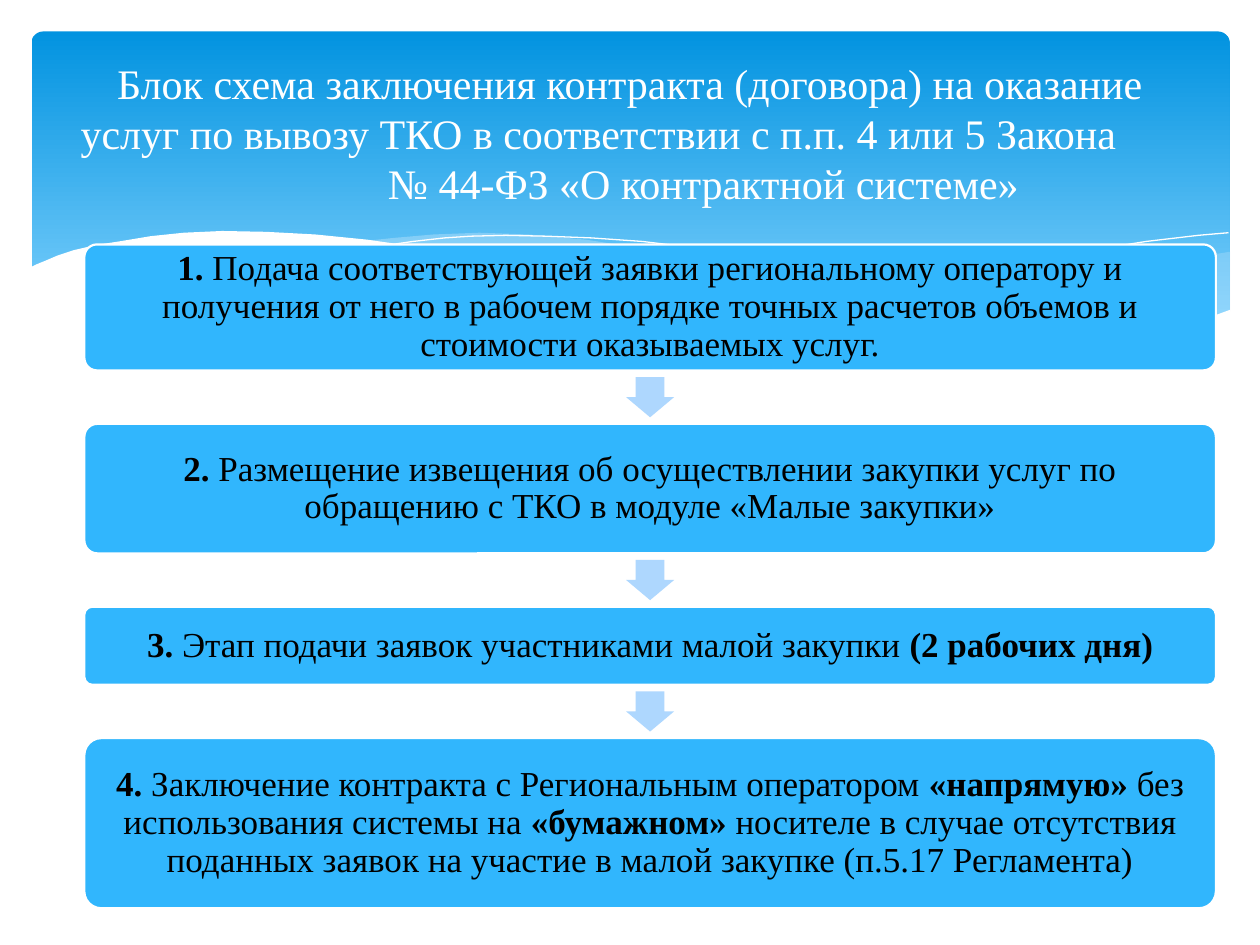
import pptx
import pptx.dml.color
import pptx.enum.shapes
import pptx.enum.text
import pptx.oxml
import pptx.oxml.ns
import pptx.util

Pt = pptx.util.Pt
SHAPE = pptx.enum.shapes.MSO_SHAPE

COLORS = {
    "sky_top": "0293E0",
    "sky_bottom": "83D3FE",
    "wave": "C6E7FC",
    "step": "31B6FD",
    "arrow": "AED7FE",
    "white": "FFFFFF",
    "black": "000000",
}

RIGHT_WAVE = [
    (702, 144), (672, 149), (642, 156), (620, 161), (580, 171), (542, 178),
    (508, 185), (476, 191), (508, 195), (536, 198), (562, 200), (586, 200),
    (608, 199), (628, 197), (646, 194), (663, 191), (678, 187), (693, 181),
    (703, 178), (703, 144),
]
MIDDLE_WAVE = [
    (643, 197), (603, 191), (558, 183), (508, 173), (453, 160), (420, 152),
    (390, 146), (361, 141), (335, 137), (302, 134), (274, 133), (248, 134),
    (225, 136), (206, 138), (233, 142), (261, 146), (291, 152), (323, 160),
    (354, 167), (382, 173), (408, 179), (433, 184), (456, 188), (479, 192),
    (500, 195), (520, 197), (539, 199), (556, 200), (603, 200), (624, 199),
]
LEFT_CREST = [
    (222, 140), (236, 138), (254, 136), (269, 135), (289, 134.5), (312, 135),
    (338, 136), (367, 138), (400, 142), (438, 147), (479, 154), (523, 163),
    (572, 174), (626, 188), (653, 196),
]
RIGHT_CREST = [
    (441, 185), (470, 177), (500, 169), (539, 161), (580, 151), (624, 143),
    (655, 138), (685, 134.5), (702, 133),
]
FRONT_WAVE = [
    (703, 177), (684, 184), (662, 191), (639, 195), (612, 198), (582, 199),
    (548, 198), (510, 195), (467, 189), (417, 180), (362, 168), (322, 158),
    (281, 149), (245, 142), (210, 137), (180, 134), (152, 132.5), (127, 132),
    (105, 133), (86, 135), (68, 138), (55, 140), (42, 143), (33, 146),
    (26, 149), (21, 151), (17, 153), (17, 237), (703, 237),
]

# Each title line: text, left margin, right margin
TITLE = [
    ("Блок схема заключения контракта (договора) на оказание", 0, 0),
    ("услуг по вывозу ТКО в соответствии с п.п. 4 или 5 Закона", 0, 36),
    ("№ 44-ФЗ «О контрактной системе»", 84, 0),
]

# Each step: height and runs, which alternate between bold and regular
STEPS = [
    (72, ["1.", " Подача соответствующей заявки региональному оператору и "
          "получения от него в рабочем порядке точных расчетов объемов и "
          "стоимости оказываемых услуг."]),
    (74, ["2.", " Размещение извещения об осуществлении закупки услуг по "
          "обращению с ТКО в модуле «Малые закупки»"]),
    (44.6, ["3. ", "Этап подачи заявок участниками малой закупки ",
            "(2 рабочих дня)"]),
    (97.2, ["4. ", "Заключение контракта с Региональным оператором ",
            "«напрямую» ", "без использования системы на ", "«бумажном» ",
            "носителе в случае отсутствия поданных заявок на участие в малой "
            "закупке (п.5.17 Регламента)"]),
]
STEP_LEFT, STEP_TOP, STEP_WIDTH, STEP_GAP = 48.2, 139.7, 646.6, 30.5
ARROW_WIDTH, ARROW_HEIGHT = 27.4, 23


def rgb(name):
    return pptx.dml.color.RGBColor.from_string(COLORS[name])


class SlideBuilder:
    """Holds the text style and the slide being drawn."""

    font_name = "Times New Roman"

    def __init__(self, slide):
        self.shapes = slide.shapes

    def finish(self, sp, fill=None, line=None, line_width=0):
        sp.shadow.inherit = False
        if fill:
            sp.fill.solid()
            sp.fill.fore_color.rgb = rgb(fill)
        else:
            sp.fill.background()
        if line:
            sp.line.color.rgb = rgb(line)
            sp.line.width = Pt(line_width)
        else:
            sp.line.fill.background()

    def preset(self, kind, left, top, width, height, adjustments, **style):
        sp = self.shapes.add_shape(kind, Pt(left), Pt(top), Pt(width), Pt(height))
        for i, value in enumerate(adjustments):
            sp.adjustments[i] = value
        self.finish(sp, **style)
        return sp

    def sky(self):
        sp = self.preset(SHAPE.ROUNDED_RECTANGLE, 18, 18, 684.7, 194.4, [0.034])
        sp.fill.gradient()
        sp.fill.gradient_angle = 270
        stops = zip(sp.fill.gradient_stops, ("sky_top", "sky_bottom"), (0, 0.9))
        for stop, color, position in stops:
            stop.color.rgb = rgb(color)
            stop.position = position

    def outline(self, points, close=True, alpha=None, **style):
        """Draw a freeform; alpha is its opacity in percent."""
        points = [(Pt(x), Pt(y)) for x, y in points]
        builder = self.shapes.build_freeform(*points[0])
        builder.add_line_segments(points[1:], close=close)
        sp = builder.convert_to_shape()
        self.finish(sp, **style)
        if alpha:
            color = sp._element.spPr.find(".//" + pptx.oxml.ns.qn("a:srgbClr"))
            color.append(pptx.oxml.parse_xml(
                f'<a:alpha {pptx.oxml.ns.nsdecls("a")} val="{alpha * 1000}"/>'))

    def set_font(self, p, size, color):
        p.alignment = pptx.enum.text.PP_ALIGN.CENTER
        p.font.name = self.font_name
        p.font.size = Pt(size)
        p.font.color.rgb = rgb(color)

    def title(self, lines):
        tf = self.shapes.add_textbox(Pt(36), Pt(26.6), Pt(648), Pt(98.6)).text_frame
        tf.word_wrap = True
        tf.vertical_anchor = pptx.enum.text.MSO_ANCHOR.MIDDLE
        for i, (text, left, right) in enumerate(lines):
            p = tf.add_paragraph() if i else tf.paragraphs[0]
            p.text = text
            self.set_font(p, 24, "white")
            pPr = p._p.get_or_add_pPr()
            pPr.set("marL", str(Pt(left)))
            pPr.set("marR", str(Pt(right)))

    def step(self, top, height, runs):
        sp = self.preset(SHAPE.ROUNDED_RECTANGLE, STEP_LEFT, top, STEP_WIDTH, height,
                         [0.1], fill="step", line="white", line_width=1.25)
        tf = sp.text_frame
        tf.word_wrap = True
        tf.vertical_anchor = pptx.enum.text.MSO_ANCHOR.MIDDLE
        tf.margin_left = tf.margin_right = tf.margin_top = tf.margin_bottom = Pt(6)
        p = tf.paragraphs[0]
        p.line_spacing = 0.9
        self.set_font(p, 20, "black")
        for i, text in enumerate(runs):
            r = p.add_run()
            r.text = text
            r.font.bold = i % 2 == 0

    def arrow(self, gap_top):
        self.preset(SHAPE.DOWN_ARROW, STEP_LEFT + (STEP_WIDTH - ARROW_WIDTH) / 2,
                    gap_top + (STEP_GAP - ARROW_HEIGHT) / 2,
                    ARROW_WIDTH, ARROW_HEIGHT, [0.6, 0.5], fill="arrow")


def main():
    prs = pptx.Presentation()
    prs.slide_width, prs.slide_height = Pt(720), Pt(540)
    s = SlideBuilder(prs.slides.add_slide(prs.slide_layouts[6]))

    s.sky()
    s.outline(RIGHT_WAVE, fill="wave", alpha=29)
    s.outline(MIDDLE_WAVE, fill="wave", alpha=40)
    for crest in (LEFT_CREST, RIGHT_CREST):
        s.outline(crest, close=False, line="white")
    s.outline(FRONT_WAVE, fill="white")

    top = STEP_TOP
    for i, (height, runs) in enumerate(STEPS):
        if i:
            s.arrow(top - STEP_GAP)
        s.step(top, height, runs)
        top += height + STEP_GAP

    s.title(TITLE)
    prs.save("out.pptx")


if __name__ == "__main__":
    main()
